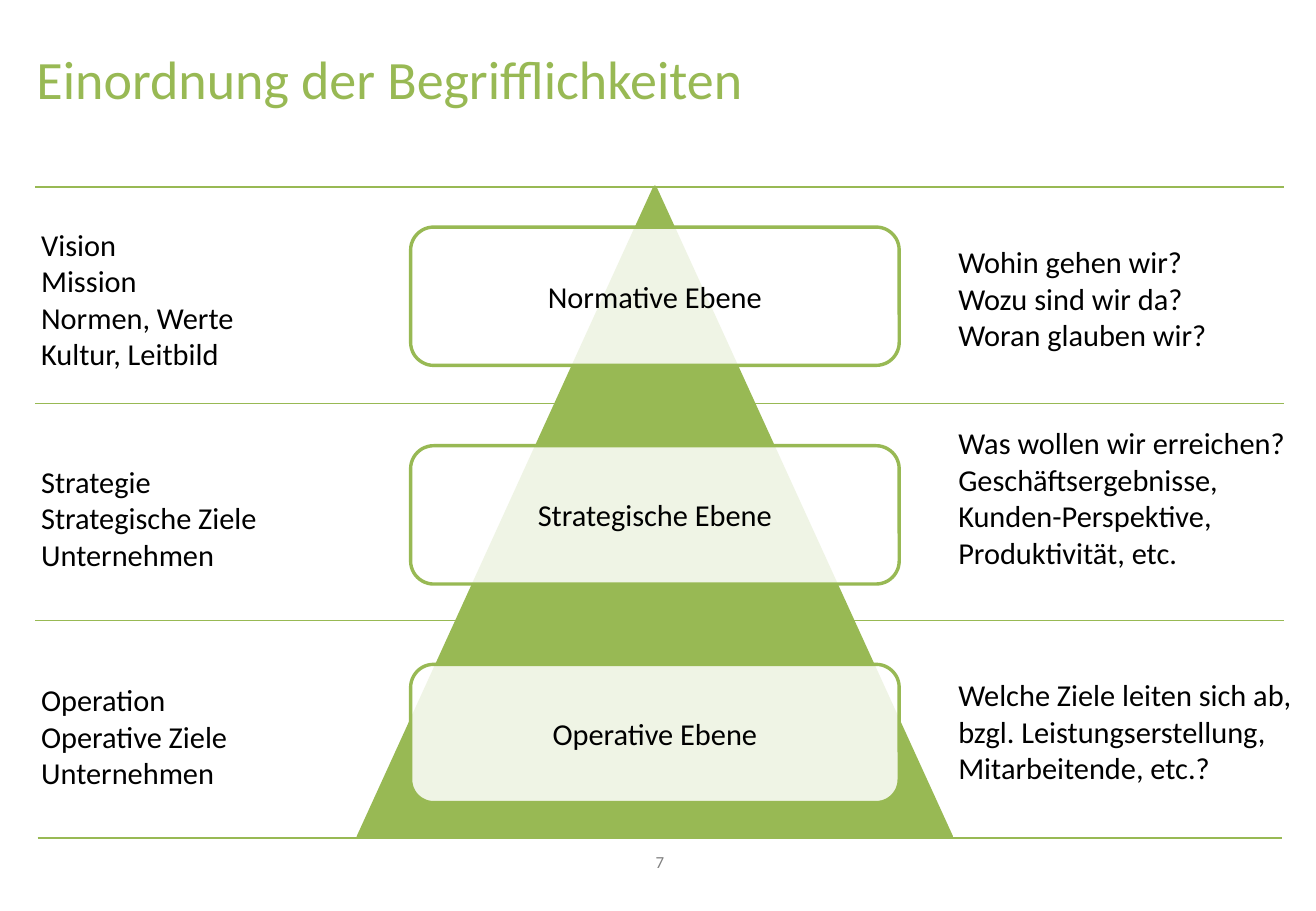
from dataclasses import dataclass

from lxml import etree
from pptx import Presentation
from pptx import util as u
from pptx.dml.color import RGBColor
from pptx.enum import shapes, text
from pptx.oxml import ns


@dataclass(frozen=True)
class Theme:
    """Colours, font and sizes shared by the whole slide."""
    green: RGBColor = RGBColor(0x98, 0xB9, 0x54)
    black: RGBColor = RGBColor(0, 0, 0)
    white: RGBColor = RGBColor(255, 255, 255)
    grey: RGBColor = RGBColor(0x80, 0x80, 0x80)
    font: str = "Calibri"
    title: float = 32
    body: float = 18
    number: float = 10
    outline: float = 2
    rule: float = 0.75


THEME = Theme()
LEVELS = [
    ("Normative Ebene",
     ["Vision", "Mission", "Normen, Werte", "Kultur, Leitbild"],
     ["Wohin gehen wir?", "Wozu sind wir da?", "Woran glauben wir?"], 1),
    ("Strategische Ebene",
     ["Strategie", "Strategische Ziele", "Unternehmen"],
     ["Was wollen wir erreichen?",
      "Geschäftsergebnisse, Kunden-Perspektive, Produktivität, etc."], -10.5),
    ("Operative Ebene",
     ["Operation", "Operative Ziele", "Unternehmen"],
     ["Welche Ziele leiten sich ab, bzgl. Leistungserstellung, "
      "Mitarbeitende, etc.?"], -1.5),
]


def points(*lengths):
    """Convert numbers in points to lengths."""
    return [u.Pt(length) for length in lengths]


def write(shape, lines, size=THEME.body, color=THEME.black,
          align=text.PP_ALIGN.LEFT, anchor=text.MSO_ANCHOR.MIDDLE, inset=None):
    """Write one paragraph per line into a shape."""
    frame = shape.text_frame
    frame.word_wrap = True
    frame.vertical_anchor = anchor
    if inset is not None:
        frame.margin_left = frame.margin_right = u.Pt(inset)
        frame.margin_top = frame.margin_bottom = u.Pt(inset)
    frame.text = "\n".join(lines)
    for paragraph in frame.paragraphs:
        paragraph.alignment = align
        paragraph.font.name = THEME.font
        paragraph.font.size = u.Pt(size)
        paragraph.font.color.rgb = color


def add_rule(slide, left, right, top):
    """Draw a thin horizontal line."""
    line = slide.shapes.add_connector(
        shapes.MSO_CONNECTOR.STRAIGHT, *points(left, top, right, top))
    line.line.color.rgb = THEME.green
    line.line.width = u.Pt(THEME.rule)
    etree.SubElement(line._element.spPr, ns.qn("a:effectLst"))


def add_outlined(slide, kind, box, fill, opacity=100):
    """Draw a green-edged preset shape with the given fill."""
    shape = slide.shapes.add_shape(kind, *points(*box))
    shape.shadow.inherit = False
    shape.fill.solid()
    shape.fill.fore_color.rgb = fill
    shape.line.color.rgb = THEME.green
    shape.line.width = u.Pt(THEME.outline)
    if opacity < 100:
        color = shape._element.spPr.find(ns.qn("a:solidFill"))[0]
        etree.SubElement(color, ns.qn("a:alpha"), val=str(opacity * 1000))
    return shape


def add_title(slide, box, title):
    """Place the title placeholder in its box."""
    shape = slide.shapes.title
    shape.left, shape.top, shape.width, shape.height = points(*box)
    write(shape, [title], size=THEME.title, color=THEME.green,
          anchor=text.MSO_ANCHOR.BOTTOM, inset=0)


def add_level(slide, box, level):
    """Place one level: terms at left, name in the middle, questions at right."""
    left, top, width, height = box
    name, terms, questions, question_shift = level
    label = add_outlined(slide, shapes.MSO_SHAPE.ROUNDED_RECTANGLE,
                         (left + 226, top, 289.5, height), THEME.white, 85)
    write(label, [name], align=text.PP_ALIGN.CENTER)
    columns = [(terms, left, 200, 1.5),
               (questions, left + width - 219, 219, question_shift)]
    for lines, column_left, column_width, shift in columns:
        column = slide.shapes.add_textbox(
            *points(column_left, top + shift, column_width, height))
        write(column, lines)


def add_pyramid(slide, box):
    """Place the triangle with its levels and the lines between them."""
    left, top, width, height = box
    add_outlined(slide, shapes.MSO_SHAPE.ISOSCELES_TRIANGLE,
                 (left + 195, top, 351.5, height), THEME.green)
    for index, level in enumerate(LEVELS):
        add_rule(slide, left + 3.5, left + 743.5, top + index * 128.5)
        add_level(slide, (left, top + 23.7 + index * 129.6, width, 82), level)


def add_footer(slide, box, number):
    """Place the closing line and the page number."""
    left, top, width, height = box
    add_rule(slide, left, left + width, top)
    page = slide.shapes.add_textbox(
        *points(left + width / 2 - 52.5, top + 8, 105, height - 8))
    write(page, [number], size=THEME.number, color=THEME.grey,
          align=text.PP_ALIGN.CENTER, inset=0)


def main():
    """Build and save the slide."""
    presentation = Presentation()
    presentation.slide_width, presentation.slide_height = points(779.76, 540)
    slide = presentation.slides.add_slide(presentation.slide_layouts[5])
    add_title(slide, (21.6, 0, 736.5, 65.5), "Einordnung der Begrifflichkeiten")
    add_footer(slide, (22.3, 496.8, 737.3, 20), "7")
    add_pyramid(slide, (17.3, 110.9, 762.46, 385.2))
    presentation.save("out.pptx")


if __name__ == "__main__":
    main()
